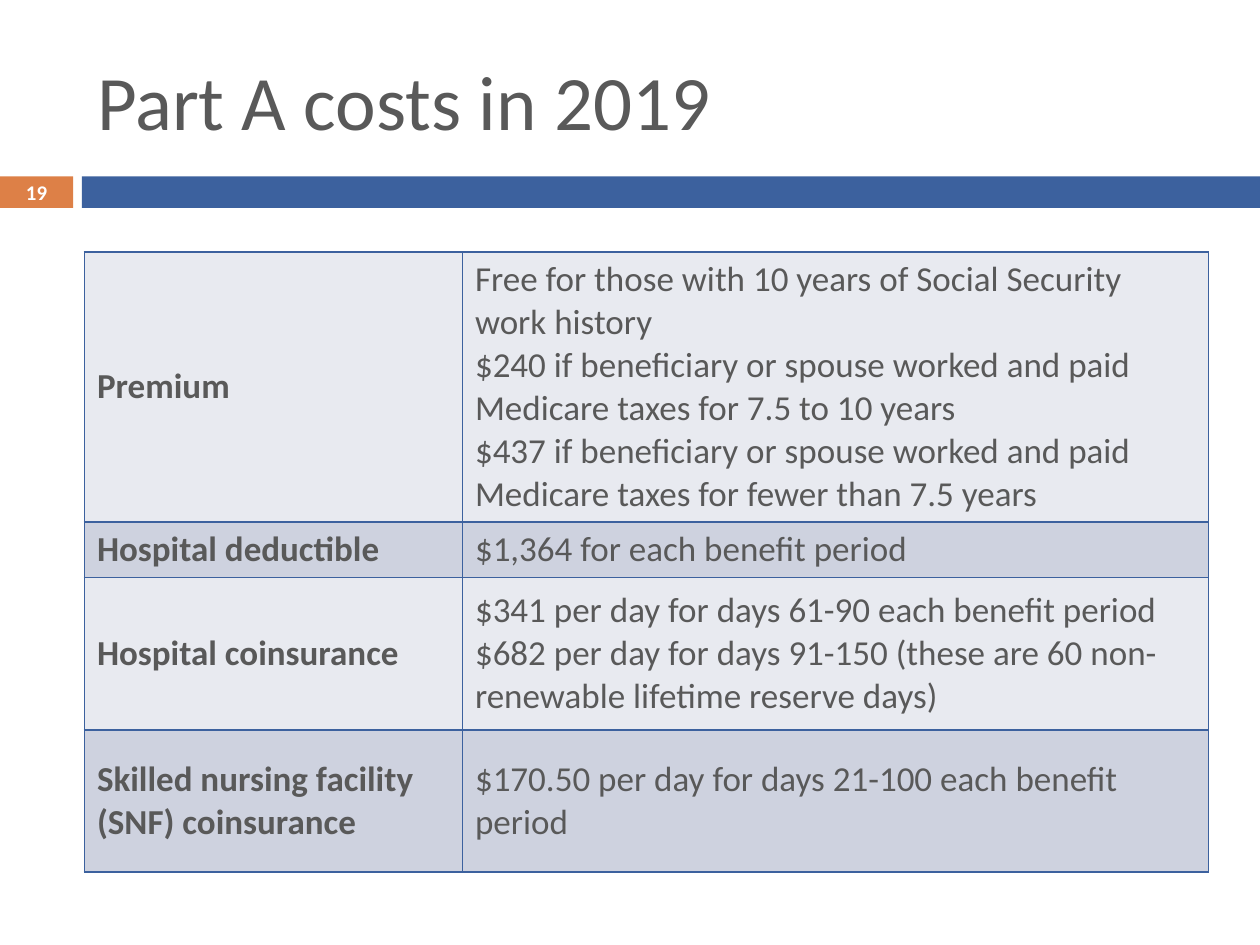
from lxml.etree import SubElement
from pptx import Presentation
from pptx.dml.color import RGBColor
from pptx.enum.shapes import MSO_SHAPE as Shape
from pptx.enum.text import MSO_ANCHOR as Anchor, PP_ALIGN as Align
from pptx.oxml.ns import qn
from pptx.util import Inches, Pt

COLORS = {
    "text": "595959", "blue": "3C619E", "orange": "DD8047",
    "white": "FFFFFF", "light": "E8EAF0", "dark": "CED2DF",
}
FONT = "Calibri"
WIDTH, HEIGHT = 10, 7.5
MARGIN, CONTENT_WIDTH = 0.67, 8.92
BAND_TOP, BAND_HEIGHT, NUMBER_WIDTH, BAND_LEFT = 1.4, 0.25, 0.58, 0.65


def color(name):
    return RGBColor.from_string(COLORS[name])


def write(frame, lines, size=20, bold=False, fill="text", align=Align.LEFT):
    """Put one paragraph per line into a text frame."""
    frame.word_wrap = True
    for i, line in enumerate(lines):
        paragraph = frame.paragraphs[0] if i == 0 else frame.add_paragraph()
        paragraph.alignment = align
        run = paragraph.add_run()
        run.text = line
        font = run.font
        font.name, font.size, font.bold = FONT, Pt(size), bold
        font.color.rgb = color(fill)


class SlideBuilder:
    def __init__(self, deck):
        self.slide = deck.slides.add_slide(deck.slide_layouts[5])

    def title(self, text, left, top, width, height):
        heading = self.slide.shapes.title
        heading.left, heading.top = Inches(left), Inches(top)
        heading.width, heading.height = Inches(width), Inches(height)
        heading.text_frame.vertical_anchor = Anchor.MIDDLE
        write(heading.text_frame, [text], size=44)

    def bar(self, left, top, width, height, fill):
        bar = self.slide.shapes.add_shape(
            Shape.RECTANGLE, Inches(left), Inches(top), Inches(width), Inches(height))
        bar.shadow.inherit = False
        bar.fill.solid()
        bar.fill.fore_color.rgb = color(fill)
        bar.line.fill.background()
        return bar

    def border(self, cell, fill="blue", width=1):
        properties = cell._tc.get_or_add_tcPr()
        for side in ("lnL", "lnR", "lnT", "lnB"):
            line = SubElement(properties, qn(f"a:{side}"), w=str(Pt(width)))
            solid = SubElement(line, qn("a:solidFill"))
            SubElement(solid, qn("a:srgbClr"), val=COLORS[fill])

    def table(self, entries, left, top, widths, heights):
        table = self.slide.shapes.add_table(
            len(heights), len(widths), Inches(left), Inches(top),
            Inches(sum(widths)), Inches(sum(heights))).table
        table.first_row = table.horz_banding = False
        for column, width in zip(table.columns, widths):
            column.width = Inches(width)
        for r, (entry, height) in enumerate(zip(entries, heights)):
            table.rows[r].height = Inches(height)
            for c, lines in enumerate(entry):
                cell = table.cell(r, c)
                self.border(cell)
                cell.fill.solid()
                cell.fill.fore_color.rgb = color("dark" if r % 2 else "light")
                cell.vertical_anchor = Anchor.MIDDLE
                write(cell.text_frame, lines, bold=c == 0)


COSTS = [
    (["Premium"],
     ["Free for those with 10 years of Social Security work history",
      "$240 if beneficiary or spouse worked and paid Medicare taxes for 7.5 to 10 years",
      "$437 if beneficiary or spouse worked and paid Medicare taxes for fewer than 7.5 years"]),
    (["Hospital deductible"], ["$1,364 for each benefit period"]),
    (["Hospital coinsurance"],
     ["$341 per day for days 61-90 each benefit period",
      "$682 per day for days 91-150 (these are 60 non-renewable lifetime reserve days)"]),
    (["Skilled nursing facility (SNF) coinsurance"],
     ["$170.50 per day for days 21-100 each benefit period"]),
]


def main():
    deck = Presentation()
    deck.slide_width, deck.slide_height = Inches(WIDTH), Inches(HEIGHT)
    builder = SlideBuilder(deck)

    # Header band with the slide number
    number = builder.bar(0, BAND_TOP, NUMBER_WIDTH, BAND_HEIGHT, "orange").text_frame
    number.margin_top = number.margin_bottom = 0
    number.vertical_anchor = Anchor.MIDDLE
    write(number, ["19"], size=11.9, bold=True, fill="white", align=Align.CENTER)
    builder.bar(BAND_LEFT, BAND_TOP, WIDTH - BAND_LEFT, BAND_HEIGHT, "blue")

    # Title
    builder.title("Part A costs in 2019", MARGIN, 0.25, CONTENT_WIDTH, 1.08)

    # Cost table
    builder.table(COSTS, MARGIN, 2, widths=[3, CONTENT_WIDTH - 3],
                  heights=[2.05, 0.44, 1.21, 1.13])

    deck.save("out.pptx")


if __name__ == "__main__":
    main()
